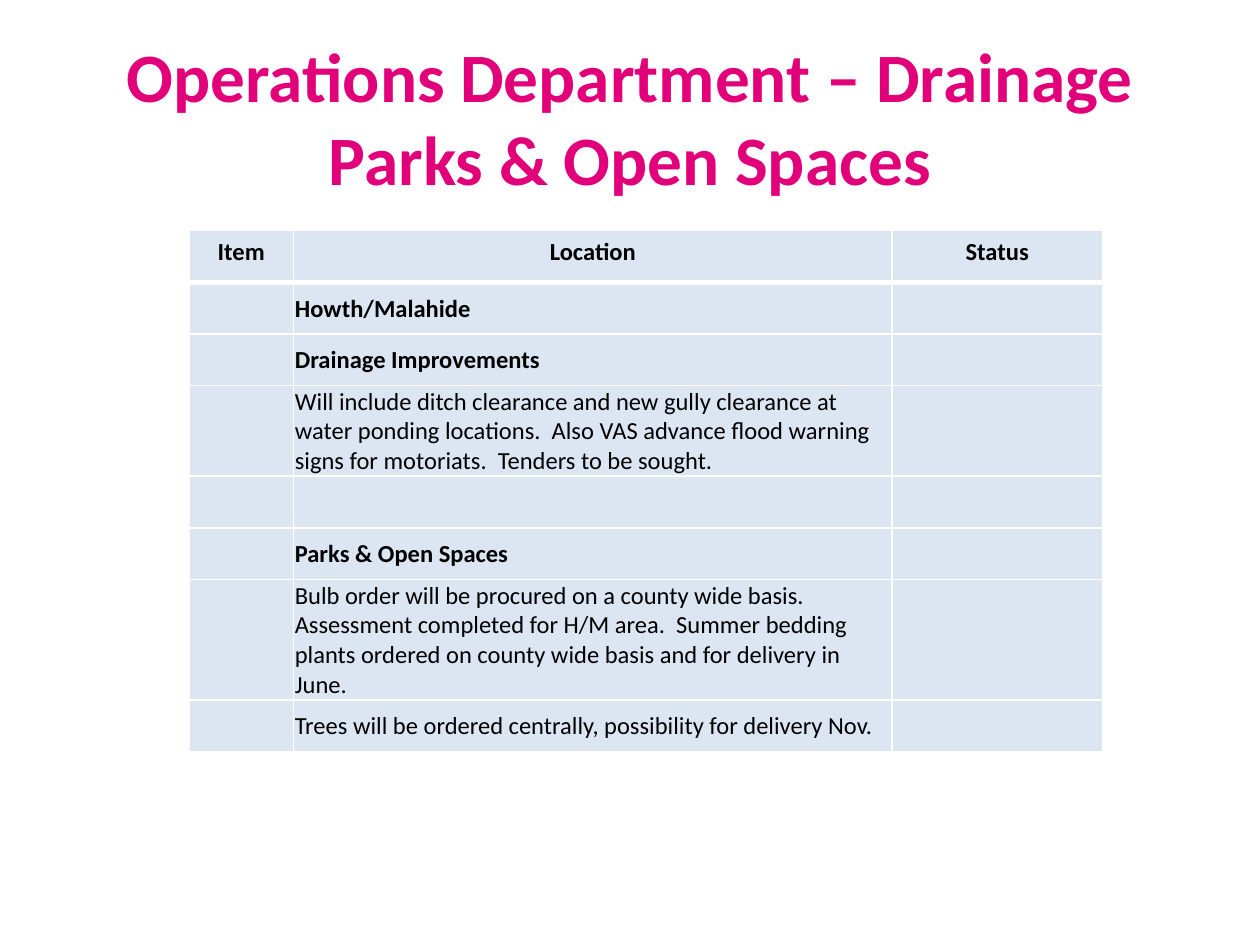
from dataclasses import dataclass

from lxml import etree
from pptx import Presentation
from pptx.dml.color import RGBColor
from pptx.enum.text import MSO_ANCHOR, MSO_AUTO_SIZE, PP_ALIGN
from pptx.oxml.ns import qn
from pptx.slide import Slide
from pptx.table import Table, _Cell
from pptx.text.text import TextFrame
from pptx.util import Inches, Pt

CENTER, LEFT = PP_ALIGN.CENTER, PP_ALIGN.LEFT
MIDDLE, NO_FIT = MSO_ANCHOR.MIDDLE, MSO_AUTO_SIZE.NONE
TITLE_ONLY = 5


@dataclass(frozen=True)
class Theme:
    font: str = "Calibri"
    pink: str = "E2007A"
    ink: str = "000000"
    pale: str = "DCE6F2"
    rule: str = "FFFFFF"
    title: float = 39.6
    body: float = 14
    thin: float = 1
    thick: float = 3


@dataclass(frozen=True)
class Entry:
    text: str = ""
    bold: bool = False


THEME = Theme()
HEADS = ("Item", "Location", "Status")
WIDTHS = (0.83, 4.75, 1.67)
HEIGHT = 0.41
ENTRIES = (
    Entry("Howth/Malahide", True),
    Entry("Drainage Improvements", True),
    Entry("Will include ditch clearance and new gully clearance at water ponding "
          "locations.  Also VAS advance flood warning signs for motoriats.  "
          "Tenders to be sought."),
    Entry(),
    Entry("Parks & Open Spaces", True),
    Entry("Bulb order will be procured on a county wide basis. Assessment "
          "completed for H/M area.  Summer bedding plants ordered on county wide "
          "basis and for delivery in June."),
    Entry("Trees will be ordered centrally, possibility for delivery Nov."),
)


def write(frame: TextFrame, text: str, size: float, color: str,
          bold: bool, align: PP_ALIGN) -> None:
    para = frame.paragraphs[0]
    para.alignment = align
    run = para.add_run()
    run.text = text
    font = run.font
    font.name, font.size, font.bold = THEME.font, Pt(size), bold
    font.color.rgb = RGBColor.from_string(color)


def style(cell: _Cell, top: float, base: float) -> None:
    """Rule all four sides, then fill: the schema wants lines first."""
    props = cell._tc.get_or_add_tcPr()
    sides = {"L": THEME.thin, "R": THEME.thin, "T": top, "B": base}
    for side, width in sides.items():
        line = etree.SubElement(props, qn(f"a:ln{side}"), w=str(Pt(width)))
        fill = etree.SubElement(line, qn("a:solidFill"))
        etree.SubElement(fill, qn("a:srgbClr"), val=THEME.rule)
    cell.fill.solid()
    cell.fill.fore_color.rgb = RGBColor.from_string(THEME.pale)


def add_title(slide: Slide) -> None:
    title = slide.shapes.title
    title.left, title.top = Inches(0.5), Inches(0.3)
    title.width, title.height = Inches(9), Inches(1.25)
    frame = title.text_frame
    frame.word_wrap, frame.auto_size = True, NO_FIT
    frame.vertical_anchor = MIDDLE
    write(frame, "Operations Department – Drainage Parks & Open Spaces",
          THEME.title, THEME.pink, True, CENTER)


def fill_rows(table: Table) -> None:
    for cell, head in zip(table.rows[0].cells, HEADS):
        write(cell.text_frame, head, THEME.body, THEME.ink, True, CENTER)
    for row, entry in enumerate(ENTRIES, 1):
        if not entry.text:
            continue
        cell = table.cell(row, 1)
        cell.vertical_anchor = MIDDLE
        cell.margin_left = cell.margin_right = cell.margin_top = Inches(0.01)
        cell.margin_bottom = 0
        write(cell.text_frame, entry.text, THEME.body, THEME.ink, entry.bold, LEFT)


def add_works(slide: Slide) -> None:
    count = len(ENTRIES) + 1
    table = slide.shapes.add_table(
        count, len(HEADS), Inches(1.5), Inches(1.83),
        Inches(sum(WIDTHS)), Inches(HEIGHT * count)).table
    for col, width in zip(table.columns, WIDTHS):
        col.width = Inches(width)
    for index, row in enumerate(table.rows):
        row.height = Inches(HEIGHT)
        top = THEME.thick if index == 1 else THEME.thin
        base = THEME.thick if index == 0 else THEME.thin
        for cell in row.cells:
            style(cell, top, base)
    fill_rows(table)


def main() -> None:
    deck = Presentation()
    deck.slide_width, deck.slide_height = Inches(10), Inches(7.5)
    slide = deck.slides.add_slide(deck.slide_layouts[TITLE_ONLY])
    add_works(slide)
    add_title(slide)
    deck.save("out.pptx")


if __name__ == "__main__":
    main()
